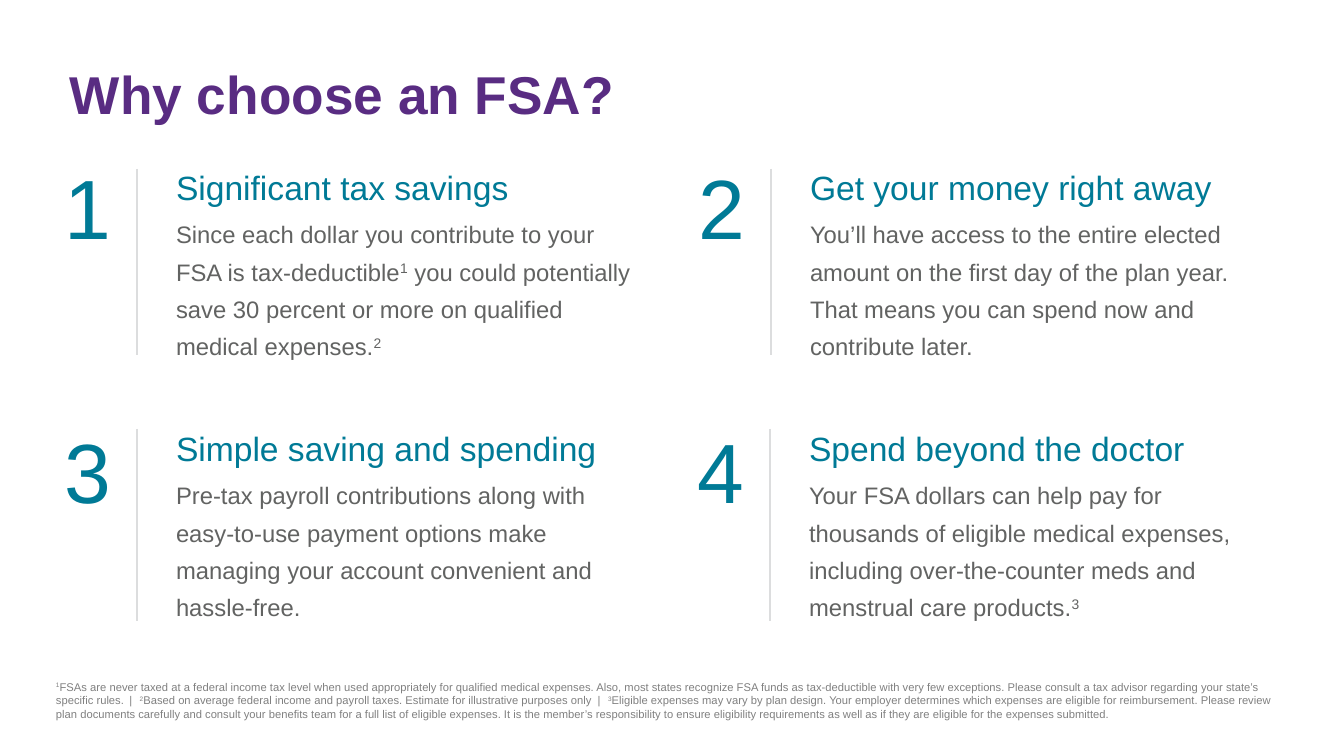
from lxml import etree
from pptx import Presentation
from pptx.dml.color import RGBColor
from pptx.enum.shapes import MSO_CONNECTOR
from pptx.enum.text import MSO_ANCHOR, PP_ALIGN
from pptx.oxml.ns import qn
from pptx.util import Emu, Pt

STRAIGHT = MSO_CONNECTOR.STRAIGHT
TOP = MSO_ANCHOR.TOP
LEFT, CENTER = PP_ALIGN.LEFT, PP_ALIGN.CENTER

SCALE = 914400 / 100.8
COLORS = {"title": "592C82", "accent": "007A96", "body": "626362",
          "rule": "DCDDDE", "note": "808080"}
SUPERSCRIPT = {"baseline": "30000"}
WIDE = {"spc": "150"}


def px(length):
    return Emu(round(length * SCALE))


class SlideBuilder:
    """Holds the style and the current slide."""

    def __init__(self, deck, font="Arial"):
        self.page = deck.slides.add_slide(deck.slide_layouts[6])
        self.font = font

    def text_box(self, left, top, width, height, insets=(10, 5, 10, 5)):
        box = self.page.shapes.add_textbox(px(left), px(top), px(width), px(height))
        frame = box.text_frame
        frame.word_wrap = True
        frame.vertical_anchor = TOP
        (frame.margin_left, frame.margin_top,
         frame.margin_right, frame.margin_bottom) = map(px, insets)
        return frame

    def fill_paragraph(self, para, pieces, size, color, bold=False, align=LEFT,
                       spacing=None, after=0):
        """Fill a paragraph from (text, run attributes) pieces."""
        para.alignment = align
        para.space_after = Pt(after)
        if spacing:
            para.line_spacing = spacing
        for text, attributes in pieces:
            for index, line in enumerate(text.split("\n")):
                if index:
                    para.add_line_break()
                span = para.add_run()
                span.text = line
                span.font.name = self.font
                span.font.size = Pt(size)
                span.font.bold = bold
                span.font.color.rgb = RGBColor.from_string(COLORS[color])
                for name, value in attributes.items():
                    span.font._element.set(name, value)

    def divider(self, x, top, bottom):
        line = self.page.shapes.add_connector(STRAIGHT, px(x), px(top), px(x), px(bottom))
        line.line.color.rgb = RGBColor.from_string(COLORS["rule"])
        line.line.width = Pt(2)
        etree.SubElement(line._element.spPr, qn("a:effectLst"))

    def benefit(self, number, left, row, width, heading, body):
        """A numeral, a divider, and a heading with its text."""
        numeral = self.text_box(left, row["numeral"], 98, 35, (10, 13, 10, 5))
        self.fill_paragraph(numeral.paragraphs[0], [(str(number), {})], 60, "accent",
                            align=CENTER)
        self.divider(left + 98, row["line_top"], row["line_bottom"])
        frame = self.text_box(left + 127, row["text"], width, 200)
        self.fill_paragraph(frame.paragraphs[0], [(heading, {})], 24, "accent",
                            spacing=1.1, after=3)
        self.fill_paragraph(frame.add_paragraph(), body, 17, "body", spacing=1.3)


# Content
ROWS = [{"numeral": 143, "text": 158, "line_top": 169, "line_bottom": 355},
        {"numeral": 406, "text": 419, "line_top": 429, "line_bottom": 621}]

BENEFITS = [
    (39, 498, "Significant tax savings", [
        ("Since each dollar you contribute to your\nFSA is tax-deductible", {}),
        ("1", SUPERSCRIPT),
        (" you could potentially save 30 percent or more on qualified\nmedical expenses.", {}),
        ("2", SUPERSCRIPT)]),
    (673, 498, "Get your money right away", [
        ("You’ll have access to the entire elected amount on the first day of the plan year.\n"
         "That means you can spend now and contribute later.", {})]),
    (39, 445, "Simple saving and spending", [
        ("Pre-tax payroll contributions along with easy-to-use payment options make "
         "managing your account convenient and hassle-free.", {})]),
    (672, 445, "Spend beyond the doctor", [
        ("Your FSA dollars can help pay for thousands of eligible medical expenses, "
         "including over-the-counter meds and menstrual care products.", {}),
        ("3", SUPERSCRIPT)]),
]

FOOTNOTES = [
    "FSAs are never taxed at a federal income tax level when used appropriately for "
    "qualified medical expenses. Also, most states recognize FSA funds as tax-deductible "
    "with very few exceptions. Please consult a tax advisor regarding your state’s "
    "specific rules.",
    "Based on average federal income and payroll taxes. Estimate for illustrative "
    "purposes only",
    "Eligible expenses may vary by plan design. Your employer determines which expenses "
    "are eligible for reimbursement. Please review plan documents carefully and consult "
    "your benefits team for a full list of eligible expenses. It is the member’s "
    "responsibility to ensure eligibility requirements as well as if they are eligible "
    "for the expenses submitted.",
]


def main():
    deck = Presentation()
    deck.slide_width, deck.slide_height = px(1344), px(756)
    slide = SlideBuilder(deck)

    # Title
    title = slide.text_box(60, 30, 804, 101, (10, 10, 10, 10))
    slide.fill_paragraph(title.paragraphs[0], [("Why choose an FSA?", {})], 38, "title",
                         bold=True, spacing=Pt(60.8))

    # Two by two grid of benefits
    for index, (left, width, heading, body) in enumerate(BENEFITS):
        slide.benefit(index + 1, left, ROWS[index // 2], width, heading, body)

    # Footnotes in one running paragraph
    pieces = []
    for number, note in enumerate(FOOTNOTES, 1):
        if number > 1:
            pieces.append((" | ", WIDE))
        pieces += [(str(number), SUPERSCRIPT), (note, {})]
    notes = slide.text_box(43, 667, 1260, 83, (13, 13, 13, 13))
    slide.fill_paragraph(notes.paragraphs[0], pieces, 8, "note", after=1.3)

    deck.save("out.pptx")


if __name__ == "__main__":
    main()
